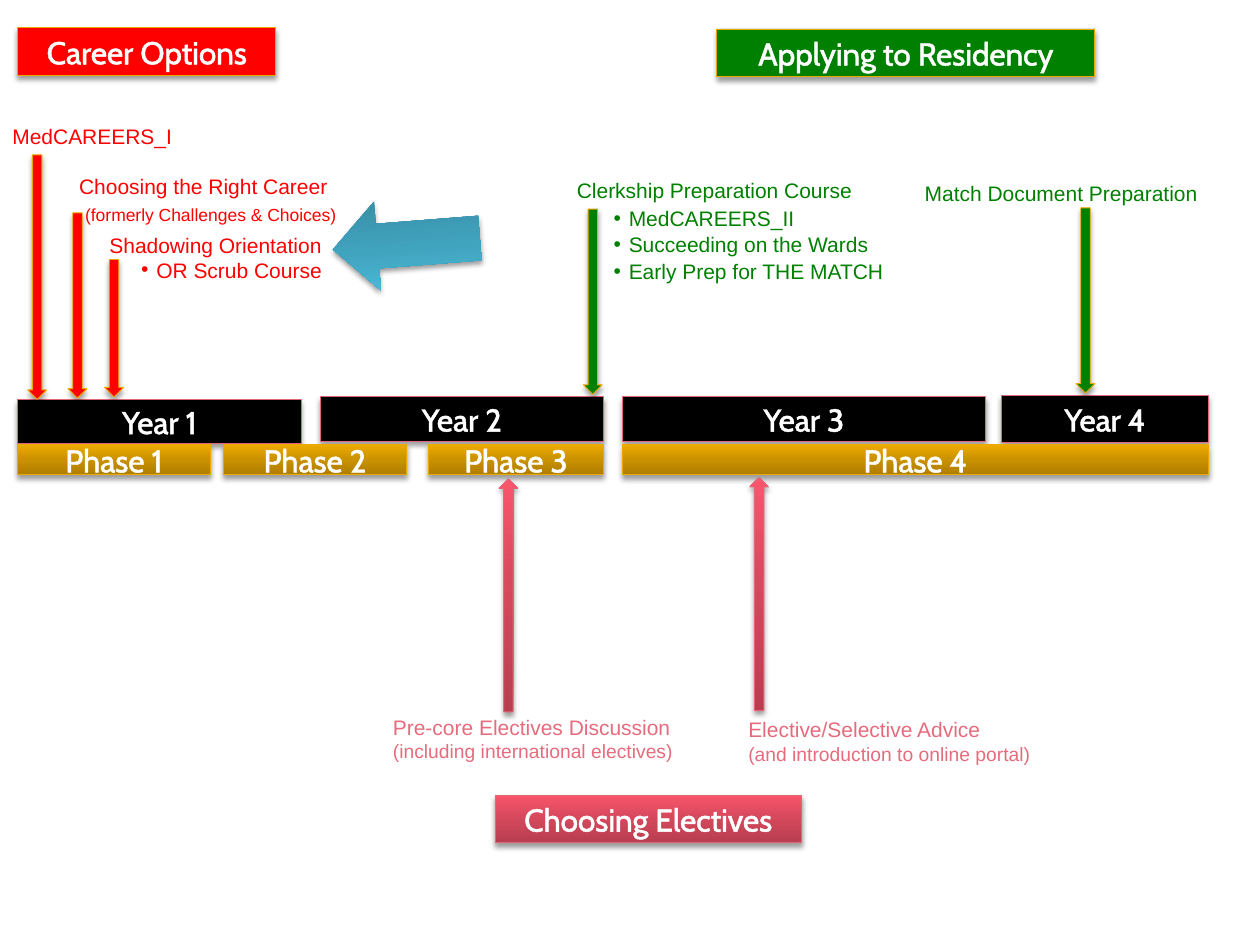
from lxml import etree
from pptx import Presentation
from pptx.dml.color import RGBColor
from pptx.enum.shapes import MSO_SHAPE as Shape
from pptx.enum.text import MSO_ANCHOR as Anchor, MSO_AUTO_SIZE as AutoSize, PP_ALIGN as Align
from pptx.oxml import parse_xml
from pptx.oxml.ns import nsdecls, qn
from pptx.util import Pt

COLORS = {
    "white": "FFFFFF", "black": "000000", "red": "FF0000", "green": "008000",
    "gold": "EBA900", "rose": "E46778", "rose_text": "E66C7D",
}
GRADIENTS = {
    "gold_gradient": ("AE7D00", "CC9300", "EEAB00"),
    "rose_gradient": ("B73E4F", "D7495D", "FA556C"),
    "blue_gradient": ("378BA2", "41A4BF", "4BBFDE"),
}
STOPS = (0, 55000, 100000)
LIST_INDENT = 8.64


def color(name):
    return RGBColor.from_string(COLORS[name])


def add_gradient(shape, name):
    stops = "".join(
        f'<a:gs pos="{position}"><a:srgbClr val="{value}"/></a:gs>'
        for position, value in zip(STOPS, GRADIENTS[name])
    )
    gradient = parse_xml(
        f'<a:gradFill {nsdecls("a")} rotWithShape="1"><a:gsLst>{stops}</a:gsLst>'
        '<a:lin ang="16200000" scaled="0"/></a:gradFill>'
    )
    shape._element.spPr.find(qn("a:prstGeom")).addnext(gradient)


def add_shadow(shape):
    shape.shadow.inherit = False
    effects = shape._element.spPr.find(qn("a:effectLst"))
    effects.append(parse_xml(
        f'<a:outerShdw {nsdecls("a")} blurRad="{Pt(3.1)}" dist="{Pt(2)}" dir="5400000" '
        f'rotWithShape="0"><a:srgbClr val="{COLORS["black"]}"><a:alpha val="38000"/>'
        '</a:srgbClr></a:outerShdw>'
    ))


def add_block(slide, kind, box, fill, line=None):
    shape = slide.shapes.add_shape(kind, *map(Pt, box))
    if fill in GRADIENTS:
        add_gradient(shape, fill)
    else:
        shape.fill.solid()
        shape.fill.fore_color.rgb = color(fill)
    if line:
        shape.line.color.rgb = color(line)
        shape.line.width = Pt(0.5)
    else:
        shape.line.fill.background()
    add_shadow(shape)
    return shape


def add_banner(slide, text, box, fill, line):
    frame = add_block(slide, Shape.RECTANGLE, box, fill, line).text_frame
    frame.text = text
    frame.vertical_anchor = Anchor.MIDDLE
    paragraph = frame.paragraphs[0]
    paragraph.alignment = Align.CENTER
    run = paragraph.runs[0]
    format_font(run.font, "Cabin", 18, "white")
    run._r.get_or_add_rPr().insert(0, parse_xml(
        f'<a:ln {nsdecls("a")} w="{Pt(1.45)}"><a:solidFill>'
        f'<a:srgbClr val="{COLORS["white"]}"/></a:solidFill></a:ln>'
    ))


def format_font(font, name, size, color_name):
    font.name = name
    font.size = Pt(size)
    font.color.rgb = color(color_name)


def add_label(slide, lines, box, color_name, indent=0, gap=0):
    frame = slide.shapes.add_textbox(*map(Pt, box)).text_frame
    frame.word_wrap = False
    frame.text = "\n".join(text for text, size in lines)
    for number, (paragraph, (text, size)) in enumerate(zip(frame.paragraphs, lines)):
        if number:
            paragraph.space_before = Pt(gap)
            paragraph._p.get_or_add_pPr().set("marL", str(Pt(indent)))
        format_font(paragraph.runs[0].font, "Arial", size, color_name)


def fill_list(placeholder, items, box, color_name):
    placeholder.left, placeholder.top, placeholder.width, placeholder.height = map(Pt, box)
    frame = placeholder.text_frame
    frame.text = "\n".join(items)
    frame.word_wrap = False
    frame.auto_size = AutoSize.NONE
    for number, paragraph in enumerate(frame.paragraphs):
        paragraph.space_before = Pt(0.8 if number else 0)
        properties = paragraph._p.get_or_add_pPr()
        properties.set("marL", str(Pt(LIST_INDENT)))
        properties.set("indent", str(-Pt(LIST_INDENT)))
        etree.SubElement(properties, qn("a:buFont")).set("typeface", "Arial")
        etree.SubElement(properties, qn("a:buChar")).set("char", "•")
        format_font(paragraph.runs[0].font, "Arial", 12, color_name)


def add_timeline(slide):
    years = [
        ("Year 1", (10.08, 228.24, 162, 25.2)),
        ("Year 2", (182.88, 226.8, 162, 25.2)),
        ("Year 3", (355.68, 226.8, 207.36, 25.2)),
        ("Year 4", (572.4, 226.08, 118.08, 26.64)),
    ]
    for text, box in years:
        add_banner(slide, text, box, "black", "rose")
    phases = [(10.08, 110.16), (127.44, 105.12), (244.8, 100.08), (355.68, 334.8)]
    for number, (left, width) in enumerate(phases, 1):
        add_banner(slide, f"Phase {number}", (left, 254.16, width, 17.28),
                   "gold_gradient", "gold")


def add_headings(slide):
    add_banner(slide, "Career Options", (10.08, 15.84, 147.6, 27.36), "red", "gold")
    add_banner(slide, "Applying to Residency", (409.68, 16.56, 216, 27.36), "green", "gold")
    add_banner(slide, "Choosing Electives", (282.96, 454.32, 174.96, 27.36),
               "rose_gradient", "rose")


def add_arrows(slide):
    down_arrows = [
        (15.84, 88.56, 139.68, "red"),
        (38.88, 121.68, 105.84, "red"),
        (59.76, 148.32, 78.48, "red"),
        (333.36, 119.52, 105.84, "green"),
        (614.88, 118.8, 105.84, "green"),
    ]
    for left, top, height, fill in down_arrows:
        add_block(slide, Shape.DOWN_ARROW, (left, top, 10.8, height), fill, "gold")
    for left, top in [(285.12, 273.6), (428.4, 272.88)]:
        add_block(slide, Shape.UP_ARROW, (left, top, 10.8, 133.2), "rose_gradient", "rose")
    pointer = add_block(slide, Shape.RIGHT_ARROW, (190.08, 113.76, 84.24, 51.12),
                        "blue_gradient")
    pointer.rotation = 175.5


def add_labels(slide):
    add_label(slide, [("MedCAREERS_I", 12)], (0, 66.96, 110.16, 21.6), "red")
    add_label(slide, [("Choosing the Right Career", 12), ("(formerly Challenges & Choices)", 10)],
              (38.16, 95.76, 162.72, 36.72), "red", indent=3.4, gap=3)
    add_label(slide, [("Shadowing Orientation", 12)], (55.44, 129.6, 136.8, 21.6), "red")
    add_label(slide, [("Clerkship Preparation Course", 12)], (322.56, 97.92, 172.8, 21.6), "green")
    add_label(slide, [("Match Document Preparation", 12)], (521.28, 99.36, 185.76, 21.6), "green")
    add_label(slide, [("Pre-core Electives Discussion", 12),
                      ("(including international electives)", 11)],
              (217.44, 404.64, 175.68, 35.28), "rose_text")
    add_label(slide, [("Elective/Selective Advice", 12),
                      ("(and introduction to online portal)", 11)],
              (420.48, 406.08, 176.4, 35.28), "rose_text")


def main():
    presentation = Presentation()
    presentation.slide_width, presentation.slide_height = Pt(720), Pt(540)
    slide = presentation.slides.add_slide(presentation.slide_layouts.get_by_name("Two Content"))
    title = slide.shapes.title._element
    title.getparent().remove(title)
    add_timeline(slide)
    add_headings(slide)
    add_arrows(slide)
    add_labels(slide)
    fill_list(slide.placeholders[1], ["OR Scrub Course"], (73.44, 143.28, 118.8, 21.6), "red")
    fill_list(slide.placeholders[2],
              ["MedCAREERS_II", "Succeeding on the Wards", "Early Prep for THE MATCH"],
              (343.44, 113.76, 169.92, 51.12), "green")
    presentation.save("out.pptx")


if __name__ == "__main__":
    main()
